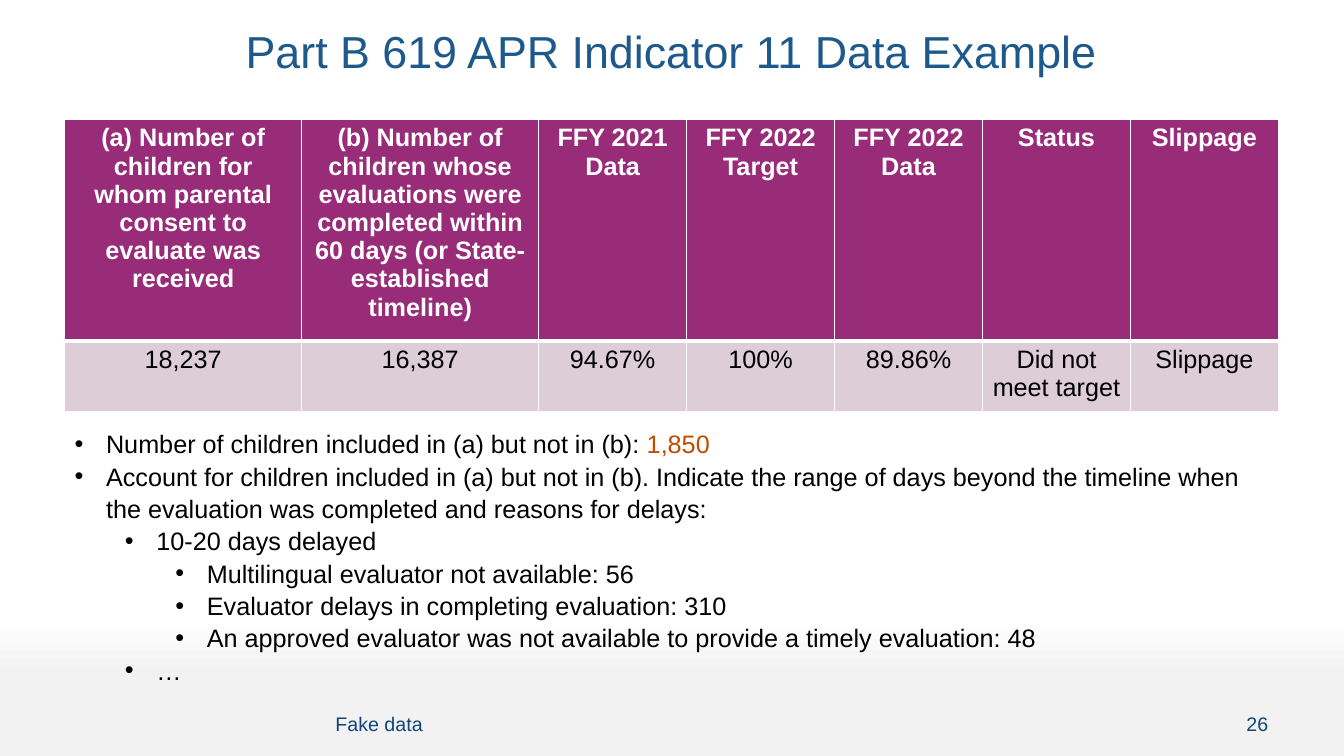
from lxml import etree
from pptx import Presentation
from pptx.dml.color import RGBColor
from pptx.enum import text
from pptx.oxml import ns
from pptx.util import Pt

# Content
TITLE = "Part B 619 APR Indicator 11 Data Example"
TABLE_ROWS = [
    ["(a) Number of children for whom parental consent to evaluate was received",
     "(b) Number of children whose evaluations were completed within 60 days "
     "(or State-established timeline)",
     "FFY 2021 Data", "FFY 2022 Target", "FFY 2022 Data", "Status", "Slippage"],
    ["18,237", "16,387", "94.67%", "100%", "89.86%", "Did not meet target", "Slippage"],
]
# (level, text, highlighted ending)
BULLETS = [
    (0, "Number of children included in (a) but not in (b): ", "1,850"),
    (0, "Account for children included in (a) but not in (b). Indicate the range of days "
        "beyond the timeline when the evaluation was completed and reasons for delays:", ""),
    (1, "10-20 days delayed", ""),
    (2, "Multilingual evaluator not available: 56", ""),
    (2, "Evaluator delays in completing evaluation: 310", ""),
    (2, "An approved evaluator was not available to provide a timely evaluation: 48", ""),
    (1, "…", ""),
]
FOOTER = "Fake data"
SLIDE_NUMBER = "26"

# Style
FONT = "Arial"
WHITE = RGBColor(0xFF, 0xFF, 0xFF)
BLACK = RGBColor(0x00, 0x00, 0x00)
LIGHT_GRAY = RGBColor(0xF2, 0xF2, 0xF2)
TITLE_BLUE = RGBColor(0x1D, 0x59, 0x8B)
FOOTER_BLUE = RGBColor(0x10, 0x45, 0x78)
PLUM = RGBColor(0x98, 0x2C, 0x78)
PALE_PLUM = RGBColor(0xDD, 0xCD, 0xD6)
ORANGE = RGBColor(0xBF, 0x4D, 0x00)
LEFT, WIDTH = 46.2, 867
WIDE_COLUMN = 169.3
ROW_HEIGHTS = [148, 47]
BULLET_HANG, LEVEL_STEP = 22.5, 36


def style_run(run, size, color, bold=False):
    run.font.name = FONT
    run.font.size = Pt(size)
    run.font.bold = bold
    run.font.color.rgb = color


def add_text(slide, box, content, size, color, align, anchor):
    shape = slide.shapes.add_textbox(*[Pt(length) for length in box])
    frame = shape.text_frame
    frame.word_wrap = True
    frame.vertical_anchor = anchor
    frame.text = content
    paragraph = frame.paragraphs[0]
    paragraph.alignment = align
    style_run(paragraph.runs[0], size, color)
    return paragraph


def set_borders(cell, widths):
    properties = cell._tc.get_or_add_tcPr()
    for index, (side, width) in enumerate(widths.items()):
        line = etree.Element(ns.qn(f"a:ln{side}"), w=str(Pt(width)))
        fill = etree.SubElement(line, ns.qn("a:solidFill"))
        etree.SubElement(fill, ns.qn("a:srgbClr"), val=str(WHITE))
        properties.insert(index, line)


def add_data_table(slide):
    row_count, column_count = len(TABLE_ROWS), len(TABLE_ROWS[0])
    table = slide.shapes.add_table(row_count, column_count, Pt(LEFT), Pt(85),
                                   Pt(WIDTH), Pt(sum(ROW_HEIGHTS))).table
    table.horz_banding = False
    narrow_column = (WIDTH - 2 * WIDE_COLUMN) / (column_count - 2)
    for index, column in enumerate(table.columns):
        column.width = Pt(WIDE_COLUMN if index < 2 else narrow_column)
    for row_index, row in enumerate(TABLE_ROWS):
        header = row_index == 0
        table.rows[row_index].height = Pt(ROW_HEIGHTS[row_index])
        for column_index, content in enumerate(row):
            cell = table.cell(row_index, column_index)
            cell.text = content
            cell.fill.solid()
            cell.fill.fore_color.rgb = PLUM if header else PALE_PLUM
            paragraph = cell.text_frame.paragraphs[0]
            paragraph.alignment = text.PP_ALIGN.CENTER
            style_run(paragraph.runs[0], 18, WHITE if header else BLACK, header)
            set_borders(cell, {"L": 1, "R": 1, "T": 1 if header else 3,
                               "B": 3 if header else 1})


def add_bullets(slide):
    frame = slide.shapes.add_textbox(Pt(LEFT), Pt(301), Pt(WIDTH), Pt(204)).text_frame
    frame.word_wrap = True
    frame.text = "\n".join(content for _, content, _ in BULLETS)
    for paragraph, (level, _, highlight) in zip(frame.paragraphs, BULLETS):
        paragraph.level = level
        paragraph.line_spacing = 1.07
        style_run(paragraph.runs[0], 18, BLACK)
        if highlight:
            run = paragraph.add_run()
            run.text = highlight
            style_run(run, 18, ORANGE)
        properties = paragraph._p.get_or_add_pPr()
        properties.set("marL", str(Pt(BULLET_HANG + level * LEVEL_STEP)))
        properties.set("indent", str(Pt(-BULLET_HANG)))
        etree.SubElement(properties, ns.qn("a:buFont"), typeface=FONT)
        etree.SubElement(properties, ns.qn("a:buChar"), char="•")


def main():
    presentation = Presentation()
    presentation.slide_width, presentation.slide_height = Pt(960), Pt(540)
    slide = presentation.slides.add_slide(presentation.slide_layouts[6])

    # Background: white fading to gray near the bottom
    background = slide.background.fill
    background.gradient()
    background.gradient_angle = 270
    for stop, position, color in zip(background.gradient_stops, (0.82, 0.89),
                                     (WHITE, LIGHT_GRAY)):
        stop.position = position
        stop.color.rgb = color

    # Title, table and notes on the data
    align, anchor = text.PP_ALIGN, text.MSO_ANCHOR
    title = add_text(slide, (LEFT, 18, WIDTH, 72), TITLE, 32, TITLE_BLUE,
                     align.CENTER, anchor.TOP)
    title.line_spacing = 0.9
    add_data_table(slide)
    add_bullets(slide)

    # Footer
    add_text(slide, (232.5, 497.5, 583, 39), FOOTER, 14, FOOTER_BLUE,
             align.LEFT, anchor.MIDDLE)
    add_text(slide, (816, 497.5, 97, 39.5), SLIDE_NUMBER, 14, FOOTER_BLUE,
             align.RIGHT, anchor.MIDDLE)
    presentation.save("out.pptx")


if __name__ == "__main__":
    main()
